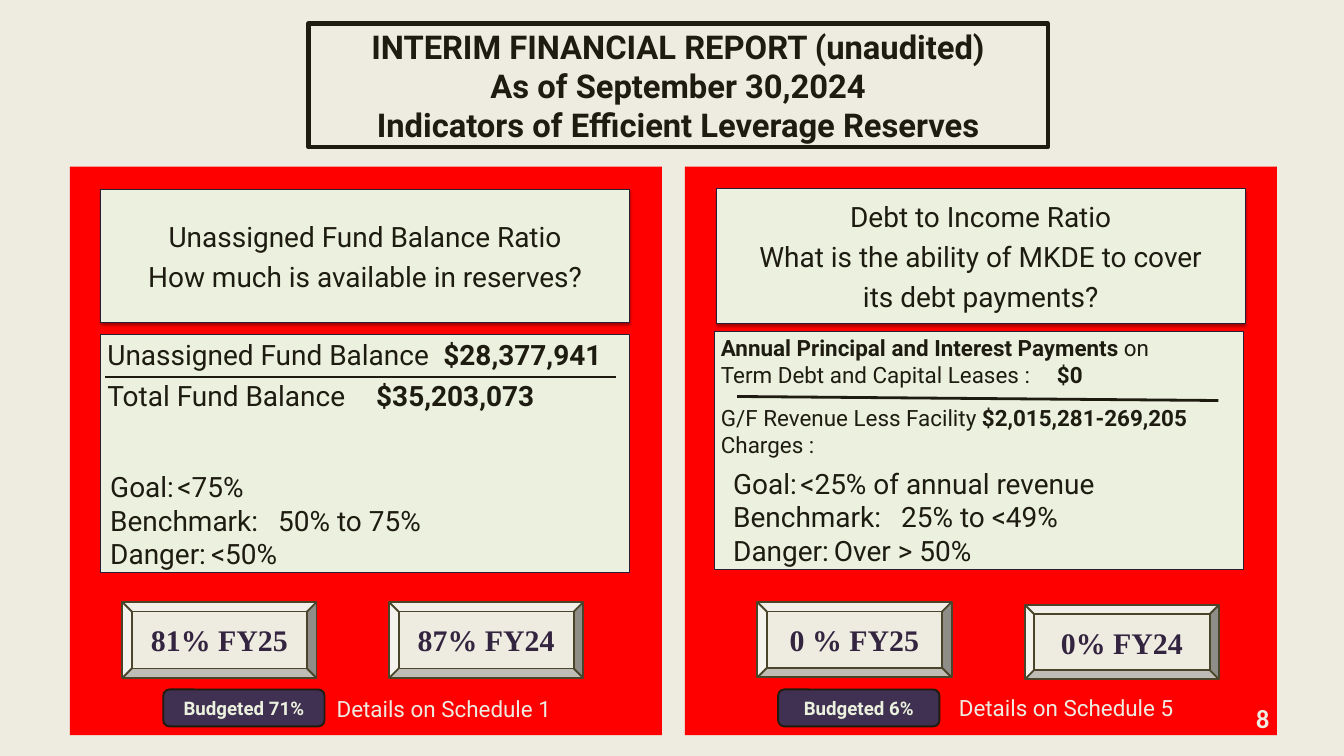
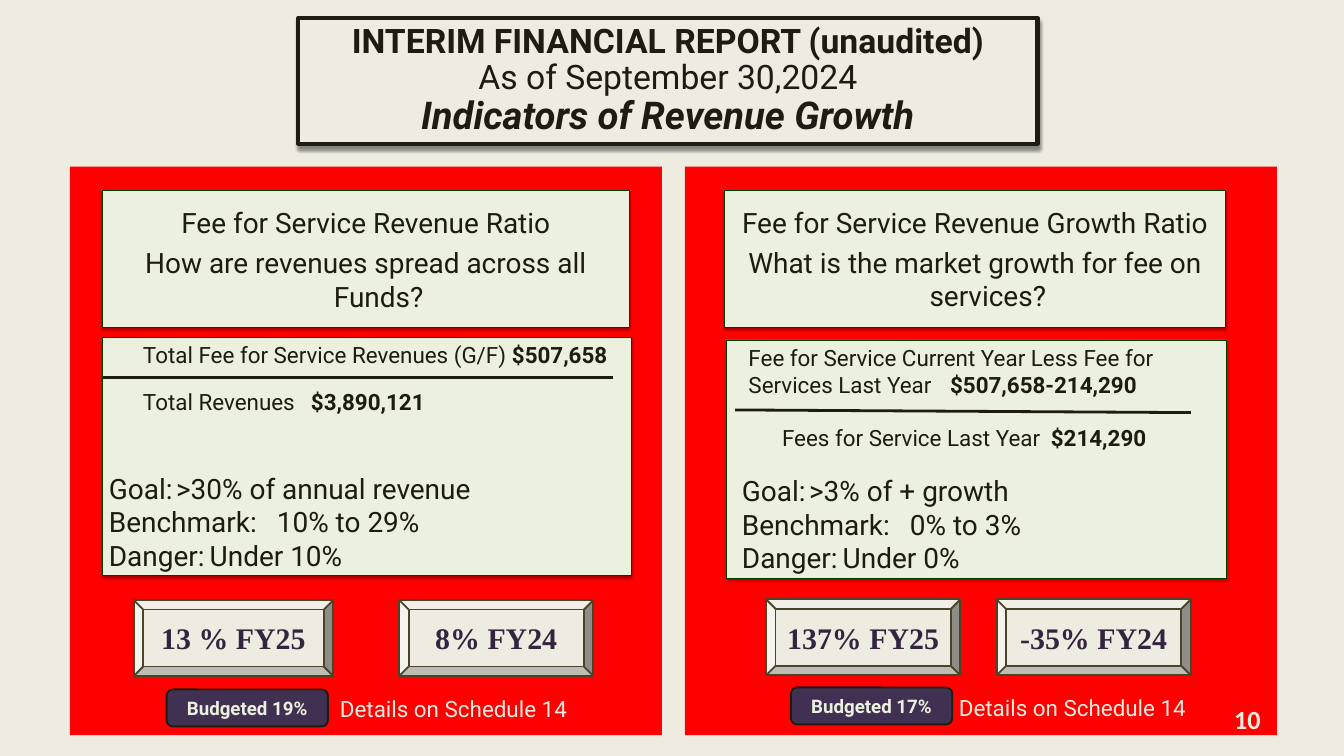
from lxml import etree
from pptx import Presentation
from pptx.dml.color import RGBColor
from pptx.enum.shapes import MSO_CONNECTOR, MSO_SHAPE
from pptx.enum.text import MSO_ANCHOR, MSO_AUTO_SIZE, PP_ALIGN
from pptx.oxml.ns import qn
from pptx.util import Emu, Pt

PX = 9144  # 100 px to the inch
color = RGBColor.from_string

# Shared look
PAPER, INK, RED, MINT = "EEECE1", "1E1C11", "FF0000", "EBF1DE"
PLUM, BRONZE, DEEP_PLUM = "403152", "4A452A", "332440"
CARD_SHADOW = (35, 3.1, 1.8)   # opacity %, blur pt, distance pt
TITLE_SHADOW = (43, 4, 4)
PANELS = [(104, 248, 881, 846), (1019, 248, 881, 846)]

# Content: paragraphs are (text, tab stops, space before); *stars* mark bold
reports = [
    {
        "title_at": (459, 35, 1100, 184), "title_fill": None, "title_shadow": None,
        "title_spacing": 1.0,
        "title": [("INTERIM FINANCIAL REPORT (unaudited)", 35.1, True, False),
                  ("As of September 30,2024", 35.1, True, False),
                  ("Indicators of Efficient Leverage Reserves", 35.1, True, False)],
        "outline": "291F35", "card_shadow": None,
        "number": "8", "number_at": (1847, 1045, 42, 47),
        "ratios": [
            {
                "question_at": (150, 282, 787, 198),
                "question": ["Unassigned Fund Balance Ratio",
                             "How much is available in reserves?"],
                "card_at": (150, 498, 787, 354), "formula_size": 30,
                "formula": [("Unassigned Fund Balance\t*$28,377,941*", [520], 0),
                            ("Total Fund Balance\t*$35,203,073*", [520], 7)],
                "rule": (157, 561, 916, 561),
                "goals_at": (154, 694, 787, 162),
                "goals": [("Goal:\t<75%", [320], 0),
                          ("Benchmark:\t50% to 75%", [320], 0),
                          ("Danger:\t<50%", [320], 0)],
                "results": [("81% FY25", (182, 896, 289, 113)),
                            ("87% FY24", (579, 896, 289, 113))],
                "budget": "Budgeted 71%", "budget_at": (243, 1026, 240, 55),
                "details": "Details on Schedule 1", "details_at": (491, 1030, 348, 50),
            },
            {
                "question_at": (1066, 281, 787, 200),
                "question": ["Debt to Income Ratio",
                             "What is the ability of MKDE to cover",
                             "its debt payments?"],
                "card_at": (1063, 493, 787, 354), "formula_size": 24,
                "formula": [("*Annual Principal and Interest Payments* on", [], 0),
                            ("Term Debt and Capital Leases :\t*$0*", [500], 0),
                            ("G/F Revenue Less Facility *$2,015,281-269,205*", [], 16.5),
                            ("Charges :", [], 0)],
                "rule": (1097, 590, 1813, 596),
                "goals_at": (1081, 689, 750, 162),
                "goals": [("Goal:\t<25% of annual revenue", [251], 0),
                          ("Benchmark:\t25% to <49%", [272], 0),
                          ("Danger:\tOver > 50%", [272], 0)],
                "results": [("0 % FY25", (1127, 896, 289, 112)),
                            ("0% FY24", (1525, 900, 289, 111))],
                "budget": "Budgeted 6%", "budget_at": (1158, 1026, 240, 55),
                "details": "Details on Schedule 5", "details_at": (1417, 1028, 383, 50),
            },
        ],
    },
    {
        "title_at": (444, 27, 1100, 187), "title_fill": PAPER, "title_shadow": TITLE_SHADOW,
        "title_spacing": 0.9,
        "title": [("INTERIM FINANCIAL REPORT (unaudited)", 36.1, True, False),
                  ("As of September 30,2024", 36.1, False, False),
                  ("Indicators of Revenue Growth", 41, True, True)],
        "outline": "003E00", "card_shadow": CARD_SHADOW,
        "number": "10", "number_at": (1834, 1046, 42, 47),
        "ratios": [
            {
                "question_at": (152, 284, 785, 203),
                "question": ["Fee for Service Revenue Ratio",
                             "How are revenues spread across all Funds?"],
                "card_at": (153, 502, 786, 354), "formula_size": 24,
                "formula": [("\tTotal Fee for Service Revenues (G/F) *$507,658*", [8], 0),
                            ("\tTotal Revenues\t*$3,890,121*", [115, 539], 22)],
                "rule": (153, 562, 912, 562),
                "goals_at": (152, 696, 785, 162),
                "goals": [("Goal:\t>30% of annual revenue", [320], 0),
                          ("Benchmark:\t10% to 29%", [320], 0),
                          ("Danger:\tUnder 10%", [320], 0)],
                "results": [("13 % FY25", (199, 893, 297, 113)),
                            ("8% FY24", (594, 893, 289, 113))],
                "budget": "Budgeted 19%", "budget_at": (248, 1026, 240, 55),
                "details": "Details on Schedule 14", "details_at": (496, 1030, 388, 50),
            },
            {
                "question_at": (1078, 283, 746, 204),
                "question": ["Fee for Service Revenue Growth Ratio",
                             "What is the market growth for fee on services?"],
                "card_at": (1081, 506, 744, 354), "formula_size": 24,
                "formula_at": (1104, 507, 744, 172),
                "formula": [("Fee for Service Current Year Less Fee for Services Last Year"
                             "\t*$507,658-214,290*", [289], 0),
                            ("\tFees for Service Last Year\t*$214,290*", [33, 441], 28)],
                "rule": (1094, 610, 1772, 614),
                "goals_at": (1094, 700, 706, 162),
                "goals": [("Goal:\t>3% of + growth", [272], 0),
                          ("Benchmark:\t0% to 3%", [272], 0),
                          ("Danger:\tUnder 0%", [272], 0)],
                "results": [("137% FY25", (1140, 892, 289, 113)),
                            ("-35% FY24", (1483, 892, 289, 113))],
                "budget": "Budgeted 17%", "budget_at": (1177, 1023, 240, 55),
                "details": "Details on Schedule 14", "details_at": (1417, 1028, 383, 50),
            },
        ],
    },
]


def place(shape, at, fill=None, line=None, line_width=0.75, shadow=None):
    """Position a shape and set its fill, outline and shadow."""
    shape.left, shape.top, shape.width, shape.height = [Emu(v * PX) for v in at]
    if fill:
        shape.fill.solid()
        shape.fill.fore_color.rgb = color(fill)
    else:
        shape.fill.background()
    if line:
        shape.line.color.rgb = color(line)
        shape.line.width = Pt(line_width)
    else:
        shape.line.fill.background()
    shape.shadow.inherit = False
    if shadow:
        opacity, blur, distance = shadow
        effects = shape.element.spPr.find(qn("a:effectLst"))
        outer = etree.SubElement(effects, qn("a:outerShdw"), blurRad=str(Pt(blur)),
                                 dist=str(Pt(distance)), dir="5400000", rotWithShape="0")
        black = etree.SubElement(outer, qn("a:srgbClr"), val="000000")
        etree.SubElement(black, qn("a:alpha"), val=str(opacity * 1000))
    return shape


def write(shape, paragraphs, size, ink=INK, font="Roboto", bold=False,
          align=PP_ALIGN.LEFT, anchor=MSO_ANCHOR.TOP, hanging=0):
    """Fill a shape with (text, tab stops, space before) paragraphs."""
    frame = shape.text_frame
    frame.word_wrap = True
    frame.auto_size = MSO_AUTO_SIZE.NONE
    frame.vertical_anchor = anchor
    for i, (text, tabs, before) in enumerate(paragraphs):
        paragraph = frame.add_paragraph() if i else frame.paragraphs[0]
        paragraph.alignment = align
        paragraph.space_before = Pt(before)
        properties = paragraph._p.get_or_add_pPr()
        properties.set("marL", str(hanging * PX))
        properties.set("indent", str(-hanging * PX))
        etree.SubElement(properties, qn("a:buNone"))
        if tabs:
            stops = etree.SubElement(properties, qn("a:tabLst"))
            for stop in tabs:
                etree.SubElement(stops, qn("a:tab"), pos=str(stop * PX), algn="l")
        for part, piece in enumerate(text.split("*")):
            if piece:
                run = paragraph.add_run()
                run.text = piece
                run.font.name, run.font.size = font, Pt(size)
                run.font.bold = bold or part % 2 == 1
                run.font.color.rgb = color(ink)


deck = Presentation()
deck.slide_width, deck.slide_height = Emu(2000 * PX), Emu(1125 * PX)
two_content = deck.slide_layouts[3]

for report in reports:
    slide = deck.slides.add_slide(two_content)
    slide.background.fill.solid()
    slide.background.fill.fore_color.rgb = color(PAPER)
    shapes = slide.shapes
    title, *goal_lists = slide.placeholders

    # Title
    place(title, report["title_at"], report["title_fill"], INK, 4.5, report["title_shadow"])
    frame = title.text_frame
    frame.text = "\v".join(line[0] for line in report["title"])
    frame.auto_size = MSO_AUTO_SIZE.NONE
    frame.vertical_anchor = MSO_ANCHOR.MIDDLE
    frame.margin_left = frame.margin_right = frame.margin_top = frame.margin_bottom = 0
    heading = frame.paragraphs[0]
    heading.alignment = PP_ALIGN.CENTER
    heading.line_spacing = report["title_spacing"]
    for run, (_, size, bold, italic) in zip(heading.runs, report["title"]):
        run.font.name, run.font.size = "Roboto", Pt(size)
        run.font.bold, run.font.italic = bold, italic
        run.font.color.rgb = color(INK)

    for panel_at, ratio, goals in zip(PANELS, report["ratios"], goal_lists):
        # Red panel with the question on top
        place(shapes.add_shape(MSO_SHAPE.RECTANGLE, 0, 0, 0, 0), panel_at, RED)
        question = place(shapes.add_shape(MSO_SHAPE.RECTANGLE, 0, 0, 0, 0),
                         ratio["question_at"], MINT, report["outline"], shadow=CARD_SHADOW)
        write(question, [(text, [], 7 if i else 0) for i, text in enumerate(ratio["question"])],
              30, align=PP_ALIGN.CENTER, anchor=MSO_ANCHOR.MIDDLE, hanging=38)

        # Ratio card: numerator, rule, denominator
        formula = place(shapes.add_shape(MSO_SHAPE.RECTANGLE, 0, 0, 0, 0), ratio["card_at"],
                        MINT, report["outline"], shadow=report["card_shadow"])
        if "formula_at" in ratio:
            formula = place(shapes.add_textbox(0, 0, 0, 0), ratio["formula_at"])
        write(formula, ratio["formula"], ratio["formula_size"])
        rule = shapes.add_connector(MSO_CONNECTOR.STRAIGHT, *[Emu(v * PX) for v in ratio["rule"]])
        rule.line.color.rgb = color(INK)
        rule.line.width = Pt(3)
        etree.SubElement(rule.element.spPr, qn("a:effectLst"))

        # Goal, benchmark and danger levels, brought in front of the card
        place(goals, ratio["goals_at"])
        write(goals, ratio["goals"], 30)
        goals.element.getparent().append(goals.element)

        # Results by fiscal year
        for result, result_at in ratio["results"]:
            plaque = place(shapes.add_shape(MSO_SHAPE.BEVEL, 0, 0, 0, 0),
                           result_at, PAPER, BRONZE, 2)
            write(plaque, [(result, [], 0)], 32, DEEP_PLUM, "Times New Roman", True,
                  PP_ALIGN.CENTER, MSO_ANCHOR.MIDDLE)

        # Budget and schedule reference
        budget = place(shapes.add_shape(MSO_SHAPE.ROUNDED_RECTANGLE, 0, 0, 0, 0),
                       ratio["budget_at"], PLUM, INK, 2)
        write(budget, [(ratio["budget"], [], 0)], 20, MINT, bold=True,
              align=PP_ALIGN.CENTER, anchor=MSO_ANCHOR.MIDDLE)
        details = place(shapes.add_textbox(0, 0, 0, 0), ratio["details_at"])
        write(details, [(ratio["details"], [], 0)], 24, PAPER)

    # Slide number
    number = place(shapes.add_textbox(0, 0, 0, 0), report["number_at"])
    frame = number.text_frame
    frame.margin_left = frame.margin_right = frame.margin_top = frame.margin_bottom = 0
    write(number, [(report["number"], [], 0)], 28, PAPER, "Calibri", True, PP_ALIGN.RIGHT)

deck.save("out.pptx")
